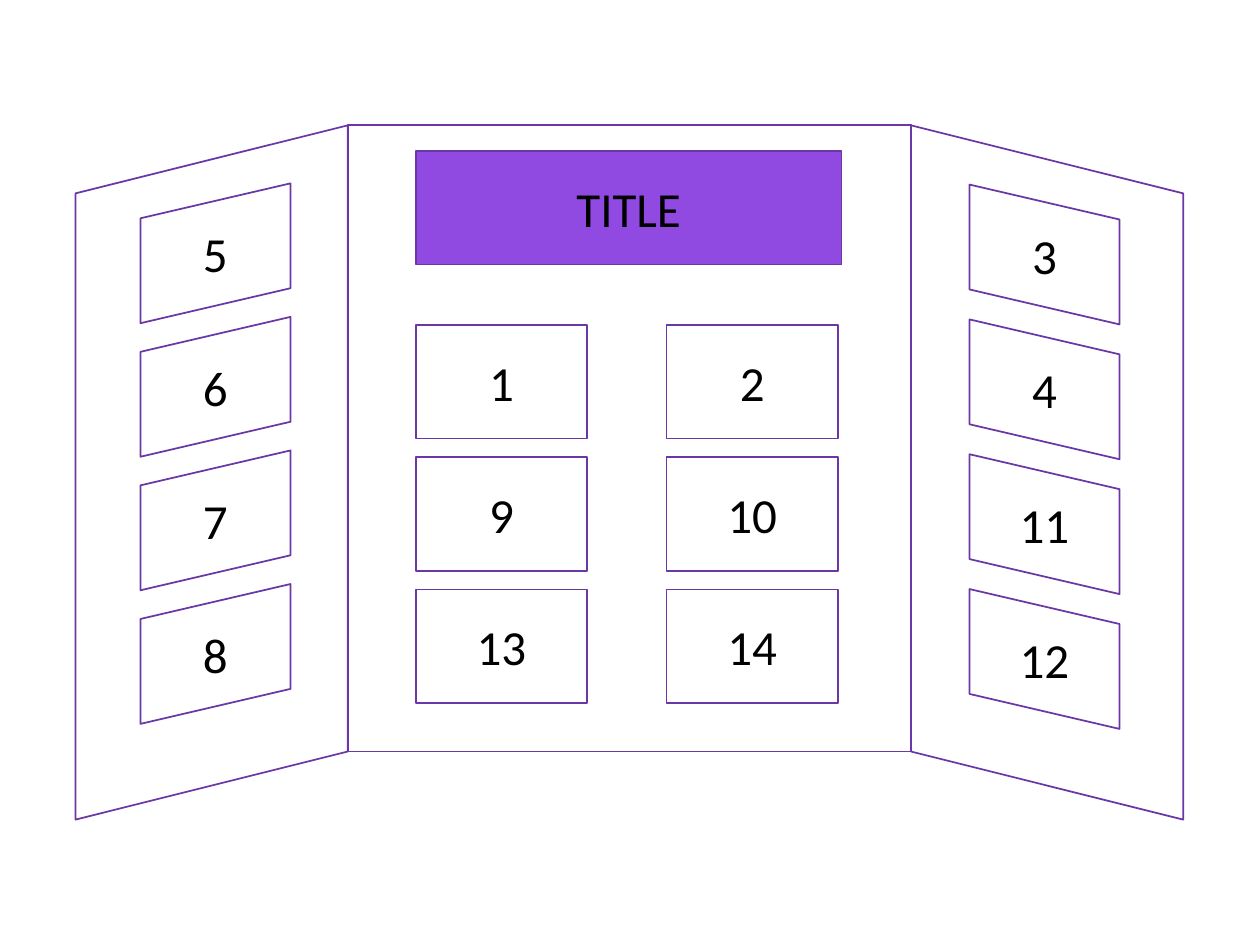
from dataclasses import dataclass

from pptx import Presentation
from pptx.dml.color import RGBColor
from pptx.enum.shapes import MSO_SHAPE as Kind
from pptx.enum.text import MSO_ANCHOR as Anchor, PP_ALIGN as Align
from pptx.util import Inches, Pt

EDGE, BANNER, WHITE, BLACK = "6B37A6", "914AE1", "FFFFFF", "000000"
FLAT, RIGHT, LEFT = 0, 90, 270  # turn of a panel and of the cards on it


@dataclass
class Box:
    """A shape's centre and its size before turning, in inches."""
    x: float
    y: float
    wide: float
    high: float
    turn: int = FLAT
    fill: str | None = None


@dataclass
class Grid:
    """Cards by row: the first card's centre, the pitches and the labels."""
    x: float
    y: float
    col: float
    row: float
    wide: float
    high: float
    turn: int
    rows: list[list[str]]


PANELS = [
    Box(5, 3.48, 4.47, 4.97, FLAT, WHITE),
    Box(8.31, 3.75, 5.51, 2.16, RIGHT, WHITE),
    Box(1.68, 3.75, 5.51, 2.16, LEFT, WHITE),
]
TITLE = Box(4.99, 1.65, 3.38, 0.9, FLAT, BANNER)
GRIDS = [
    Grid(3.98, 3.03, 1.99, 1.05, 1.36, 0.9, FLAT,
         [["1", "2"], ["9", "10"], ["13", "14"]]),
    Grid(8.29, 2.02, 0, 1.07, 1.11, 1.19, RIGHT,
         [["3"], ["4"], ["11"], ["12"]]),
    Grid(1.71, 2.01, 0, 1.06, 1.11, 1.19, LEFT,
         [["5"], ["6"], ["7"], ["8"]]),
]


def tint(code: str) -> RGBColor:
    return RGBColor.from_string(code)


def place(x: float, y: float, wide: float, high: float) -> list[int]:
    """Turn a centre and a size into left, top, width and height."""
    return [Inches(n) for n in (x - wide / 2, y - high / 2, wide, high)]


def draw(shapes, box: Box) -> None:
    kind = Kind.PARALLELOGRAM if box.turn else Kind.RECTANGLE
    shape = shapes.add_shape(kind, *place(box.x, box.y, box.wide, box.high))
    shape.shadow.inherit = False
    shape.rotation = box.turn
    if box.turn == LEFT:
        shape.element.spPr.xfrm.set("flipH", "1")
    if box.fill:
        shape.fill.solid()
        shape.fill.fore_color.rgb = tint(box.fill)
    else:
        shape.fill.background()
    shape.line.color.rgb = tint(EDGE)
    shape.line.width = Pt(1)


def label(shapes, text: str, box: Box) -> None:
    """Centre the text on a box."""
    wide = 0.2 + 0.2 * len(text)
    frame = shapes.add_textbox(*place(box.x, box.y, wide, 0.57)).text_frame
    frame.word_wrap = False
    frame.vertical_anchor = Anchor.MIDDLE
    frame.text = text
    para = frame.paragraphs[0]
    para.alignment = Align.CENTER
    font = para.runs[0].font
    font.name, font.size = "Calibri", Pt(28)
    font.color.rgb = tint(BLACK)


def fill_grid(shapes, grid: Grid) -> None:
    for row, texts in enumerate(grid.rows):
        for col, text in enumerate(texts):
            card = Box(grid.x + col * grid.col, grid.y + row * grid.row,
                       grid.wide, grid.high, grid.turn)
            draw(shapes, card)
            label(shapes, text, card)


def main() -> None:
    deck = Presentation()
    deck.slide_width, deck.slide_height = Inches(10), Inches(7.5)
    shapes = deck.slides.add_slide(deck.slide_layouts[6]).shapes
    board = shapes.add_group_shape()
    for panel in PANELS:
        draw(board.shapes, panel)
    draw(shapes, TITLE)
    label(shapes, "TITLE", TITLE)
    for grid in GRIDS:
        fill_grid(shapes, grid)
    deck.save("out.pptx")


if __name__ == "__main__":
    main()
